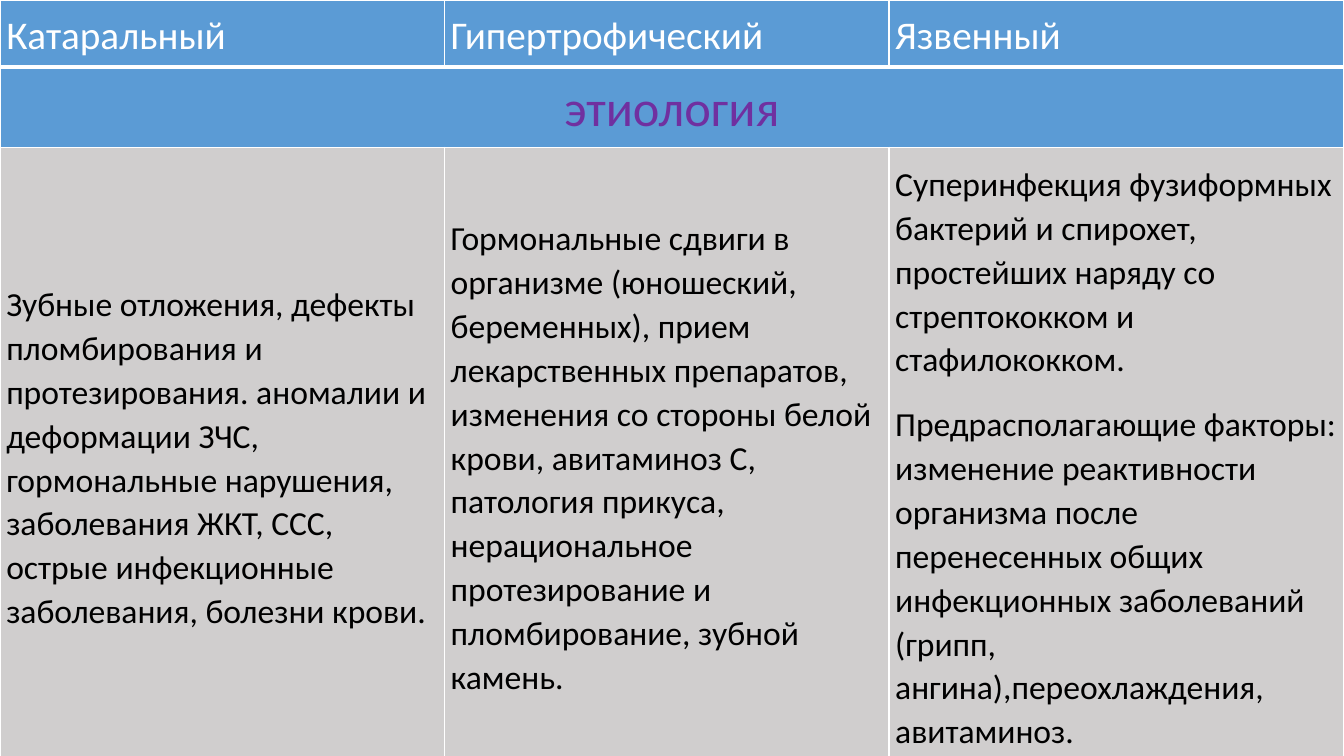
from lxml.etree import SubElement
from pptx import Presentation
from pptx.dml.color import RGBColor
from pptx.enum.text import MSO_ANCHOR as Anchor, PP_ALIGN as Align
from pptx.oxml.ns import qn
from pptx.util import Pt


def color(hex_string):
    return RGBColor.from_string(hex_string)


def add_border(cell, side, width):
    """Draw a white line on one side (L, R, T or B); call before filling the cell."""
    properties = cell._tc.get_or_add_tcPr()
    line = SubElement(properties, qn(f"a:ln{side}"), w=str(Pt(width)))
    SubElement(SubElement(line, qn("a:solidFill")), qn("a:srgbClr"), val="FFFFFF")


COLUMN_WIDTHS = [317.5, 317.5, 325]
ROW_HEIGHTS = [48, 57, 443]

# Each cell is a list of paragraphs
CELL_TEXTS = [
    [["Катаральный"], ["Гипертрофический"], ["Язвенный"]],
    [["этиология"], [], []],
    [
        [
            "Зубные отложения, дефекты пломбирования и протезирования. "
            "аномалии и деформации ЗЧС, гормональные нарушения, "
            "заболевания ЖКТ, ССС, острые инфекционные заболевания, "
            "болезни крови."
        ],
        [
            "Гормональные сдвиги в организме (юношеский, беременных), "
            "прием лекарственных препаратов, изменения со стороны белой "
            "крови, авитаминоз С, патология прикуса, нерациональное "
            "протезирование и пломбирование, зубной камень."
        ],
        [
            "Суперинфекция фузиформных бактерий и спирохет, простейших "
            "наряду со стрептококком и стафилококком.",
            "Предрасполагающие факторы: изменение реактивности организма "
            "после перенесенных общих инфекционных заболеваний (грипп, "
            "ангина),переохлаждения, авитаминоз.",
        ],
    ],
]

# Fill, font color, font size, alignment, anchor, top and bottom border of each row
ROW_STYLES = [
    ("5B9BD5", "FFFFFF", 28, Align.JUSTIFY, Anchor.BOTTOM, 1, 3),
    ("5B9BD5", "7030A0", 36, Align.CENTER, Anchor.BOTTOM, 3, 1),
    ("D0CECE", "000000", 24, Align.LEFT, Anchor.MIDDLE, 1, 1),
]

presentation = Presentation()
presentation.slide_width = Pt(960)
presentation.slide_height = Pt(540)
slide = presentation.slides.add_slide(presentation.slide_layouts[6])

table = slide.shapes.add_table(
    len(ROW_HEIGHTS), len(COLUMN_WIDTHS), 0, 0,
    Pt(sum(COLUMN_WIDTHS)), Pt(sum(ROW_HEIGHTS)),
).table
table.first_row = False
table.horz_banding = False
for column, width in zip(table.columns, COLUMN_WIDTHS):
    column.width = Pt(width)
for row, height in zip(table.rows, ROW_HEIGHTS):
    row.height = Pt(height)
table.cell(1, 0).merge(table.cell(1, 2))

for row, texts, style in zip(table.rows, CELL_TEXTS, ROW_STYLES):
    fill, font_color, size, alignment, anchor, top_border, bottom_border = style
    for cell, paragraphs in zip(row.cells, texts):
        for side, width in zip("LRTB", (1, 1, top_border, bottom_border)):
            add_border(cell, side, width)
        cell.fill.solid()
        cell.fill.fore_color.rgb = color(fill)
        cell.vertical_anchor = anchor
        cell.margin_left = cell.margin_right = Pt(4.5)
        cell.margin_top = cell.margin_bottom = Pt(5)
        for index, text in enumerate(paragraphs):
            frame = cell.text_frame
            paragraph = frame.add_paragraph() if index else frame.paragraphs[0]
            paragraph.text = text
            paragraph.alignment = alignment
            paragraph.line_spacing = 1.07
            paragraph.space_before = Pt(7.5 if index else 0)
            paragraph.space_after = Pt(7.5)
            paragraph.font.name = "Calibri"
            paragraph.font.size = Pt(size)
            paragraph.font.color.rgb = color(font_color)

presentation.save("out.pptx")
